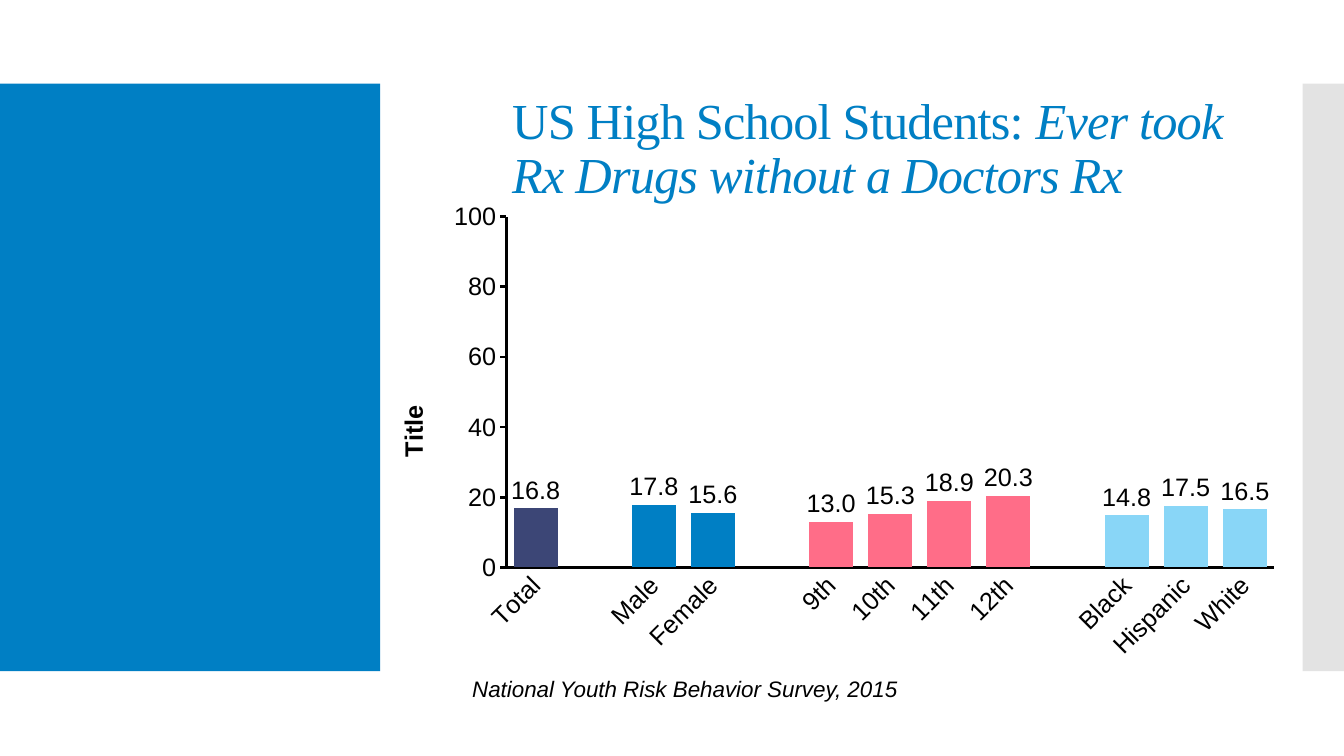
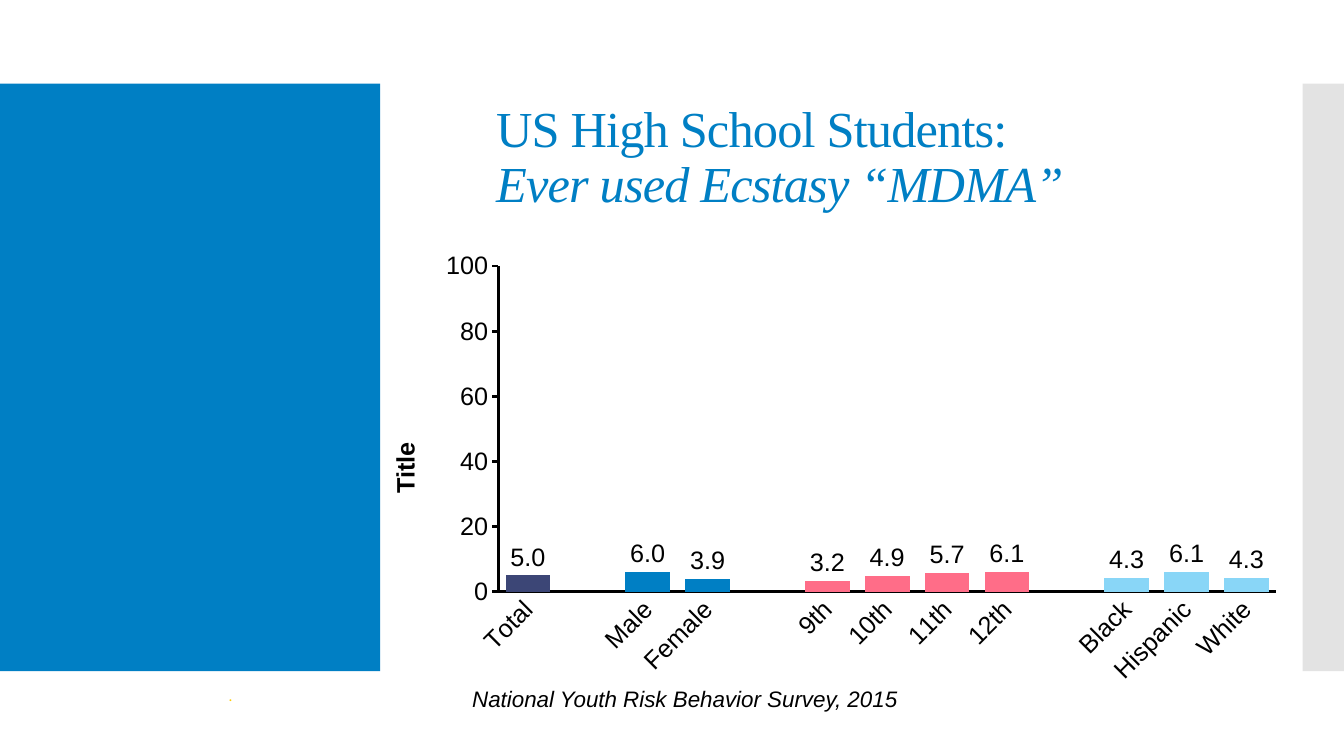
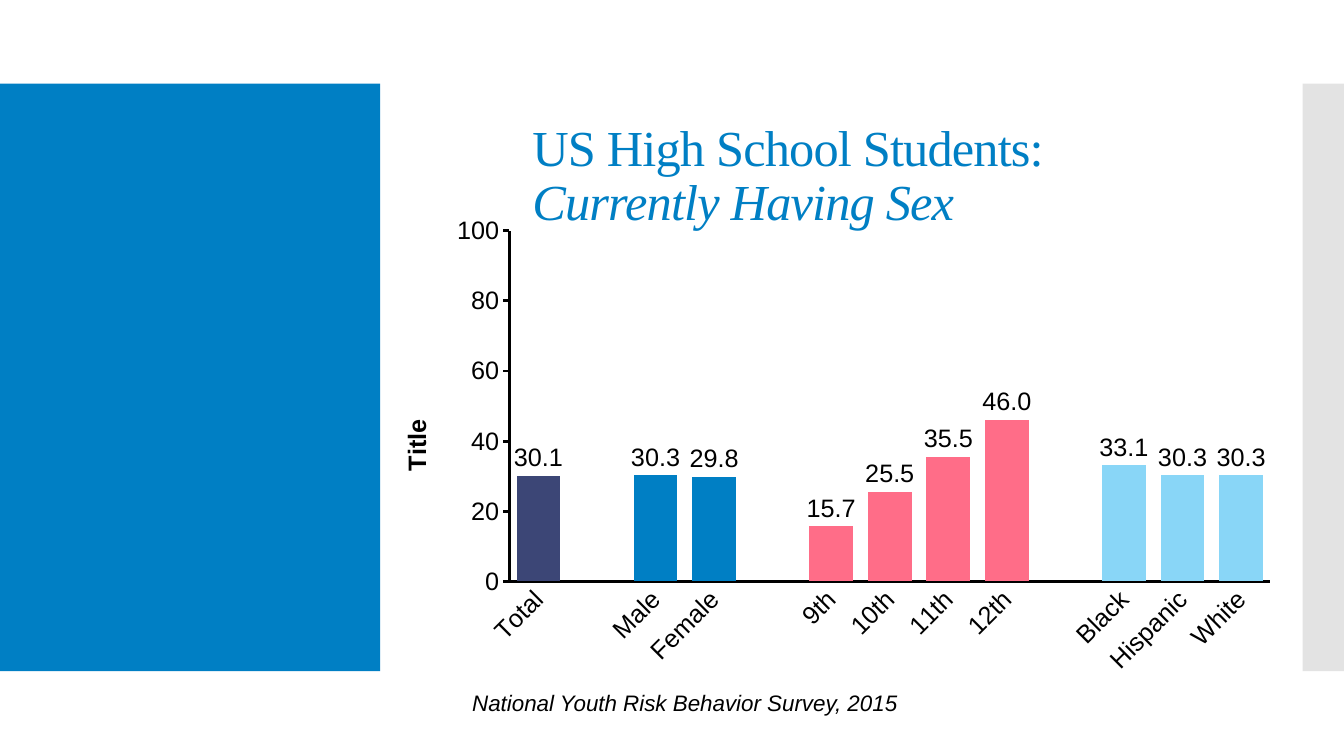
import lxml.etree
import pptx
import pptx.chart.data
import pptx.dml.color
import pptx.enum.chart
import pptx.enum.shapes
import pptx.enum.text
import pptx.oxml
import pptx.oxml.ns
import pptx.util

Inches = pptx.util.Inches
Pt = pptx.util.Pt
qn = pptx.oxml.ns.qn

BLUE, NAVY, PINK, SKY = "007FC4", "3C4676", "FF6D88", "89D6F7"
GREY, YELLOW, BLACK = "C8C8C8", "FFCC00", "000000"


def rgb(value):
    return pptx.dml.color.RGBColor.from_string(value)


def add_note(page, text, box_at, size, font, color, italic=False):
    """Add a one-paragraph text box and return it."""
    box = page.shapes.add_textbox(*[Inches(length) for length in box_at])
    box.text_frame.word_wrap = True
    span = box.text_frame.paragraphs[0].add_run()
    span.text = text
    span.font.size = Pt(size)
    span.font.name = font
    span.font.italic = italic
    span.font.color.rgb = rgb(color)
    return box


deck = pptx.Presentation()
deck.slide_width, deck.slide_height = Inches(13.33), Inches(7.5)
master = deck.slide_master
title_only = deck.slide_layouts[5]

# Shared title style
title_style = master.element.find(".//" + qn("p:titleStyle") + "/" + qn("a:lvl1pPr"))
title_style.set("algn", "l")
line_spacing = lxml.etree.Element(qn("a:lnSpc"))
lxml.etree.SubElement(line_spacing, qn("a:spcPct"), val="90000")
title_style.insert(0, line_spacing)
title_font = title_style.find(qn("a:defRPr"))
title_font.clear()
title_font.set("sz", "3600")
title_font.set("spc", "-60")
title_fill = lxml.etree.SubElement(title_font, qn("a:solidFill"))
lxml.etree.SubElement(title_fill, qn("a:srgbClr"), val=BLUE)
lxml.etree.SubElement(title_font, qn("a:latin"), typeface="Times New Roman")

# Each group: bar colour, categories
groups = [
    (NAVY, ["Total"]),
    (BLUE, ["Male", "Female"]),
    (PINK, ["9th", "10th", "11th", "12th"]),
    (SKY, ["Black", "Hispanic", "White"]),
]
categories, bar_colors = [], []
for color, names in groups:
    if categories:
        categories.append("")
        bar_colors.append(None)
    categories += names
    bar_colors += [color] * len(names)

# Space between the chart frame and its plot area, in inches
LEFT, RIGHT, TOP, BOTTOM = 1.3, 0.19, 0.23, 1.02

surveys = [
    {
        "topic": "Ever took Rx Drugs without a Doctors Rx", "break": False,
        "title_at": (4.98, 0.14, 7.74, 2.7), "chart_at": (3.72, 1.92, 9.11, 4.73),
        "source_top": 6.65,
        "values": [16.8, 17.8, 15.6, 13, 15.3, 18.9, 20.3, 14.8, 17.5, 16.5],
    },
    {
        "topic": "Ever used Ecstasy “MDMA”", "break": True,
        "title_at": (4.82, 0.74, 8.03, 1.67), "chart_at": (3.64, 2.41, 9.21, 4.48),
        "source_top": 6.75,
        "values": [5, 6, 3.9, 3.2, 4.9, 5.7, 6.1, 4.3, 6.1, 4.3],
    },
    {
        "topic": "Currently Having Sex", "break": True,
        "title_at": (5.18, 0.92, 7.21, 1.67), "chart_at": (3.75, 2.06, 9.04, 4.73),
        "source_top": 6.79,
        "values": [30.1, 30.3, 29.8, 15.7, 25.5, 35.5, 46, 33.1, 30.3, 30.3],
    },
]
pages = [deck.slides.add_slide(title_only) for survey in surveys]

# Side bands, moved to the master so every slide shows them
for left, width, color, opacity in [(0, 3.77, BLUE, 100), (12.92, 0.41, GREY, 50)]:
    band = pages[0].shapes.add_shape(
        pptx.enum.shapes.MSO_SHAPE.RECTANGLE,
        Inches(left), Inches(0.83), Inches(width), Inches(5.83))
    band.shadow.inherit = False
    band.fill.solid()
    band.fill.fore_color.rgb = rgb(color)
    band.line.fill.background()
    band_color = band.element.spPr.find(".//" + qn("a:srgbClr"))
    lxml.etree.SubElement(band_color, qn("a:alpha"), val=str(opacity * 1000))
    master.shapes.element.insert(2, band.element)

for page, survey in zip(pages, surveys):
    title = page.shapes.title
    title.left, title.top, title.width, title.height = [
        Inches(length) for length in survey["title_at"]]
    title.text_frame.auto_size = pptx.enum.text.MSO_AUTO_SIZE.NONE
    title.text_frame.vertical_anchor = pptx.enum.text.MSO_ANCHOR.MIDDLE
    para = title.text_frame.paragraphs[0]
    span = para.add_run()
    span.text = "US High School Students:" if survey["break"] else "US High School Students: "
    if survey["break"]:
        para.add_line_break()
    span = para.add_run()
    span.text = survey["topic"]
    span.font.italic = True

    source = add_note(page, "National Youth Risk Behavior Survey, 2015",
                      (3.5, survey["source_top"], 5.5, 0.64), 16, "Arial", BLACK, True)
    source.text_frame.paragraphs[0].alignment = pptx.enum.text.PP_ALIGN.RIGHT

    remaining = iter(survey["values"])
    chart_data = pptx.chart.data.CategoryChartData(number_format="General")
    chart_data.categories = categories
    chart_data.add_series(
        "Series 1", [next(remaining) if color else None for color in bar_colors])
    frame = page.shapes.add_chart(
        pptx.enum.chart.XL_CHART_TYPE.COLUMN_CLUSTERED,
        *[Inches(length) for length in survey["chart_at"]], chart_data)
    chart = frame.chart
    chart.has_title = False
    chart.has_legend = False
    chart.font.size = Pt(18)
    chart.font.name = "Arial"
    chart.font.color.rgb = rgb(BLACK)

    plot = chart.plots[0]
    plot.vary_by_categories = False
    plot.gap_width = 34
    plot.overlap = 100
    plot.has_data_labels = True
    labels = plot.data_labels
    labels.show_value = True
    labels.number_format = "#,##0.0"
    labels.number_format_is_linked = False
    labels.position = pptx.enum.chart.XL_LABEL_POSITION.OUTSIDE_END

    series = plot.series[0]
    series.format.fill.solid()
    series.format.fill.fore_color.rgb = rgb(BLUE)
    for index, color in enumerate(bar_colors):
        if color:
            bar_fill = series.points[index].format.fill
            bar_fill.solid()
            bar_fill.fore_color.rgb = rgb(color)

    ticks = pptx.enum.chart.XL_TICK_MARK
    for axis, mark in [(chart.category_axis, ticks.NONE), (chart.value_axis, ticks.OUTSIDE)]:
        axis.has_major_gridlines = False
        axis.major_tick_mark = mark
        axis.minor_tick_mark = ticks.NONE
        axis.format.line.color.rgb = rgb(BLACK)
        axis.format.line.width = Pt(2)
        axis.tick_labels.font.size = Pt(18)
        axis.tick_labels.font.name = "Arial"
        axis.tick_labels.font.color.rgb = rgb(BLACK)
    category_text = chart.category_axis.tick_labels.font._element.getparent().getparent().getparent()
    category_text.find(qn("a:bodyPr")).set("rot", "-2700000")

    value_axis = chart.value_axis
    value_axis.minimum_scale, value_axis.maximum_scale = 0, 100
    value_axis.major_unit = 20
    axis_text = value_axis.axis_title.text_frame
    span = axis_text.paragraphs[0].add_run()
    span.text = "Title"
    span.font.size = Pt(18)
    span.font.name = "Arial"
    span.font.bold = True
    span.font.color.rgb = rgb(BLACK)
    axis_text._txBody.find(qn("a:bodyPr")).set("rot", "-5400000")

    # Fixed plot area inside the chart frame
    plot_area = chart.element.find(".//" + qn("c:plotArea"))
    for old_layout in plot_area.findall(qn("c:layout")):
        plot_area.remove(old_layout)
    layout = lxml.etree.Element(qn("c:layout"))
    manual = lxml.etree.SubElement(layout, qn("c:manualLayout"))
    width, height = survey["chart_at"][2:]
    for tag, value in [
        ("layoutTarget", "inner"), ("xMode", "edge"), ("yMode", "edge"),
        ("x", LEFT / width), ("y", TOP / height),
        ("w", (width - LEFT - RIGHT) / width), ("h", (height - TOP - BOTTOM) / height),
    ]:
        lxml.etree.SubElement(manual, qn("c:" + tag), val=str(value))
    plot_area.insert(0, layout)

dot = add_note(pages[1], ".", (2.17, 6.75, 9, 0.29), 11, "Calibri", YELLOW)
dot.text_frame.vertical_anchor = pptx.enum.text.MSO_ANCHOR.BOTTOM

deck.save("out.pptx")
